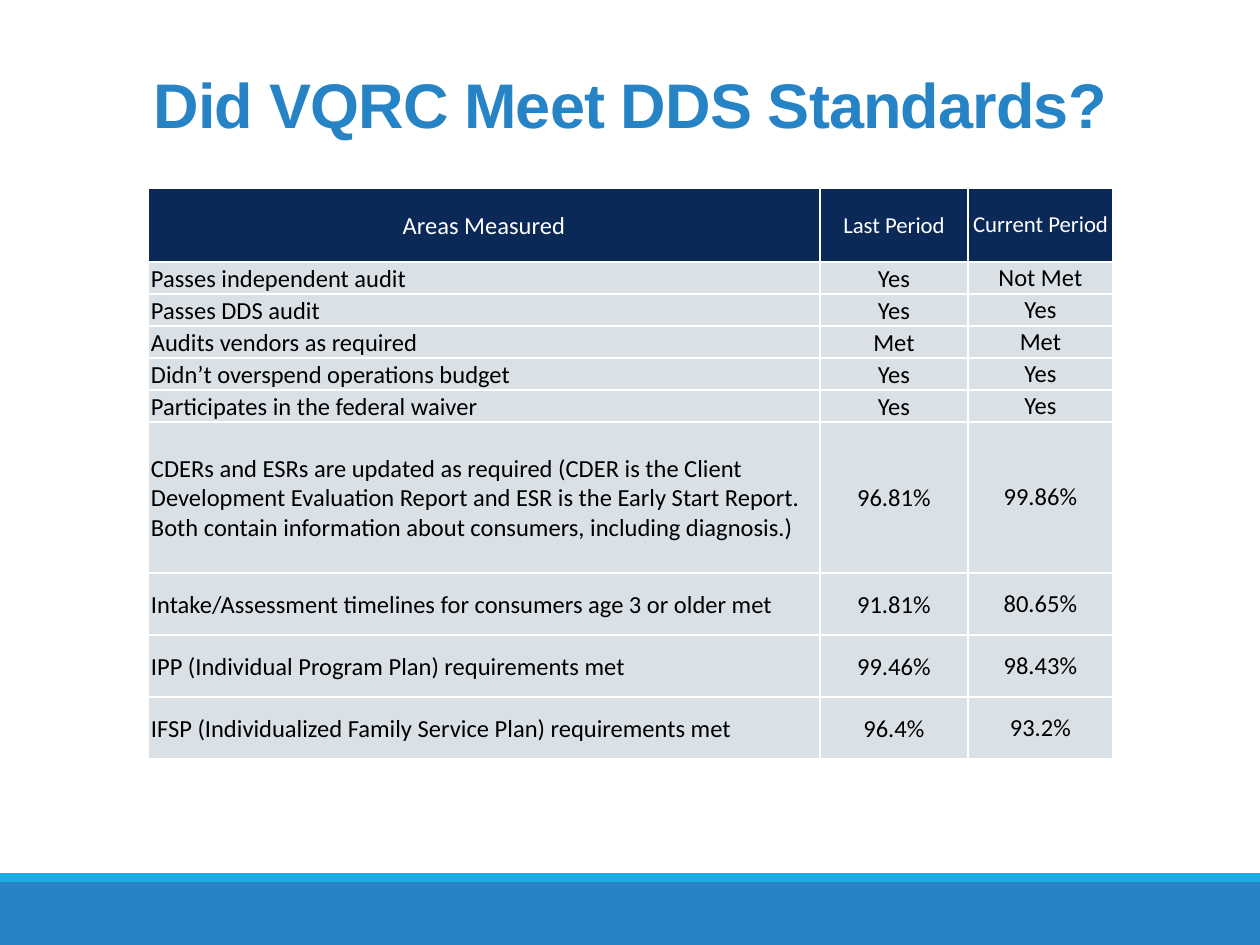
from lxml.etree import SubElement
from pptx import Presentation
from pptx.dml.color import RGBColor
from pptx.enum.shapes import MSO_SHAPE
from pptx.enum.text import MSO_ANCHOR, MSO_AUTO_SIZE, PP_ALIGN
from pptx.oxml.ns import qn
from pptx.util import Emu, Pt

PX = 914400 / 126


def px(count):
    return Emu(round(count * PX))


def paint(color_format, color):
    """Give a fill's or font's colour the value of a hex string."""
    color_format.rgb = RGBColor.from_string(color)


deck = Presentation()
deck.slide_width, deck.slide_height = px(1260), px(945)
page = deck.slides.add_slide(deck.slide_layouts[5])

# Footer bars
for top, height, color in [(882, 63, "2683C6"), (873, 9, "1CADE4")]:
    bar = page.shapes.add_shape(MSO_SHAPE.RECTANGLE, 0, px(top), px(1260), px(height))
    bar.shadow.inherit = False
    bar.fill.solid()
    paint(bar.fill.fore_color, color)
    bar.line.fill.background()

# Title
title = page.shapes.title
title.left, title.top, title.width, title.height = px(0), px(52), px(1260), px(95)
frame = title.text_frame
frame.vertical_anchor = MSO_ANCHOR.BOTTOM
frame.auto_size = MSO_AUTO_SIZE.NONE
para = frame.paragraphs[0]
para.alignment = PP_ALIGN.CENTER
span = para.add_run()
span.text = "Did VQRC Meet DDS Standards?"
for name, value in {"name": "Arial", "size": Pt(36), "bold": True}.items():
    setattr(span.font, name, value)
paint(span.font.color, "2683C6")
span._r.get_or_add_rPr().set("spc", "-50")

# Table of standards: row height, area, last period, current period
standards = [
    (74, "Areas Measured", "Last Period", "Current Period"),
    (32, "Passes independent audit", "Yes", "Not Met"),
    (32, "Passes DDS audit", "Yes", "Yes"),
    (32, "Audits vendors as required", "Met", "Met"),
    (32, "Didn’t overspend operations budget", "Yes", "Yes"),
    (32, "Participates in the federal waiver", "Yes", "Yes"),
    (151, "CDERs and ESRs are updated as required (CDER is the Client Development "
          "Evaluation Report and ESR is the Early Start Report. Both contain "
          "information about consumers, including diagnosis.)", "96.81%", "99.86%"),
    (62, "Intake/Assessment timelines for consumers age 3 or older met", "91.81%", "80.65%"),
    (62, "IPP (Individual Program Plan) requirements met", "99.46%", "98.43%"),
    (62, "IFSP (Individualized Family Service Plan) requirements met", "96.4%", "93.2%"),
]
column_widths = [672, 148, 145]
table = page.shapes.add_table(
    len(standards), len(column_widths), px(148), px(188),
    px(sum(column_widths)), px(sum(row[0] for row in standards))).table
for column, width in zip(table.columns, column_widths):
    column.width = px(width)

for row_index, (height, *texts) in enumerate(standards):
    table.rows[row_index].height = px(height)
    is_header = row_index == 0
    for column_index, text in enumerate(texts):
        cell = table.cell(row_index, column_index)
        inset = px(0 if column_index == 2 else 2)
        cell_format = {"vertical_anchor": MSO_ANCHOR.MIDDLE, "margin_left": inset,
                       "margin_right": inset, "margin_top": inset, "margin_bottom": 0}
        for name, value in cell_format.items():
            setattr(cell, name, value)

        for side in ("lnL", "lnR", "lnT", "lnB"):
            border = SubElement(cell._tc.get_or_add_tcPr(), qn(f"a:{side}"), w=str(Pt(1)))
            border_fill = SubElement(border, qn("a:solidFill"))
            SubElement(border_fill, qn("a:srgbClr"), val="FFFFFF")
        cell.fill.solid()
        paint(cell.fill.fore_color, "0B2957" if is_header else "D9E0E6")

        para = cell.text_frame.paragraphs[0]
        is_area = column_index == 0
        para.alignment = PP_ALIGN.LEFT if is_area and not is_header else PP_ALIGN.CENTER
        if not is_header:
            para.space_before = para.space_after = Pt(2)
            if is_area:
                para._p.get_or_add_pPr().set("marL", str(px(1)))
        span = para.add_run()
        span.text = text
        size = Pt(13 if is_header and not is_area else 14)
        for name, value in {"name": "Calibri", "size": size, "bold": False}.items():
            setattr(span.font, name, value)
        paint(span.font.color, "FFFFFF" if is_header else "000000")

deck.save("out.pptx")
